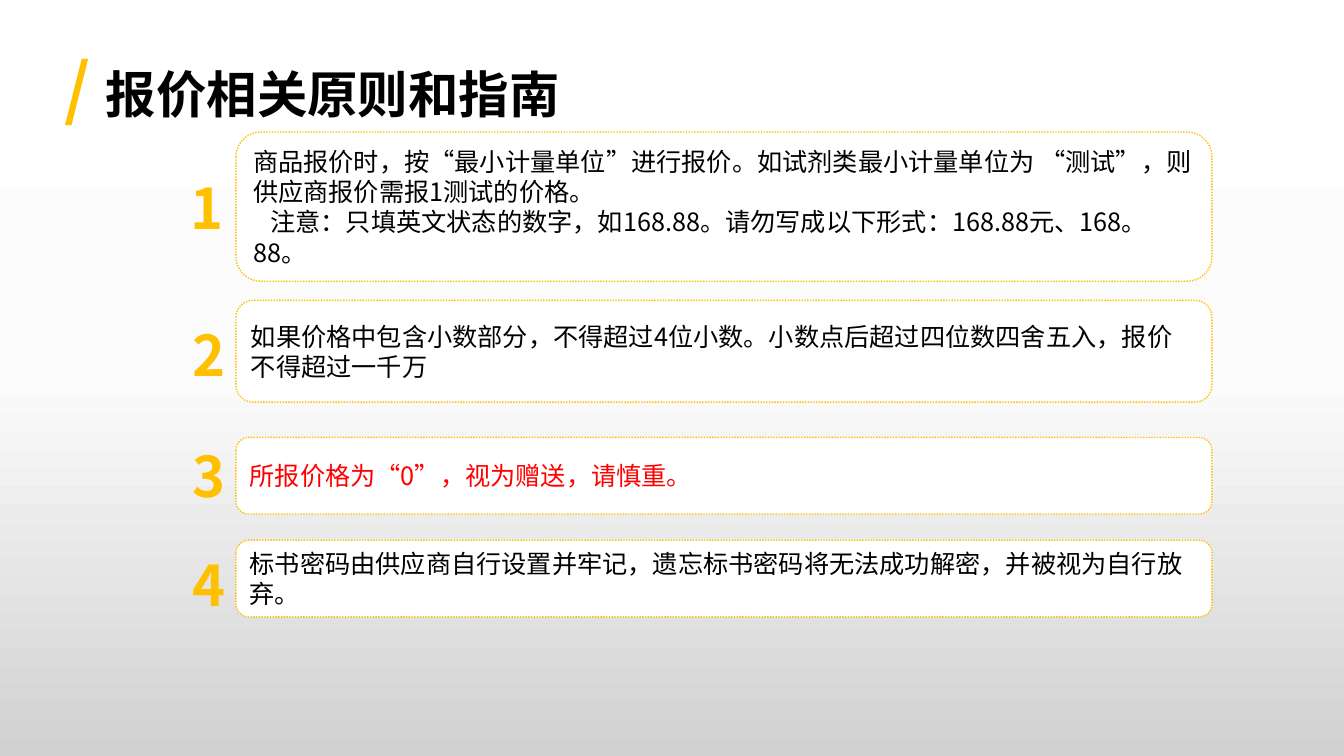
from copy import deepcopy

from lxml.etree import SubElement
from pptx import Presentation
from pptx.dml.color import RGBColor
from pptx.enum.dml import MSO_LINE
from pptx.enum.shapes import MSO_SHAPE
from pptx.enum.text import MSO_ANCHOR, MSO_AUTO_SIZE, PP_ALIGN
from pptx.oxml.ns import qn
from pptx.util import Inches, Pt

FONT = "Noto Sans CJK SC"
COLORS = {"accent": "FFC000", "text": "000000", "warning": "FF0000", "card": "FFFFFF"}
BACKGROUND = [(0, "FFFFFF"), (0.5, "FBFBFB"), (1, "D1D1D1")]
TITLE = [("/ ", 48, "accent"), ("报价相关原则和指南", 36, "text")]

# Card top, card height, number left, number top, text colour, paragraphs
RULES = [
    (1.31, 1.48, 1.76, 1.76, "text", [
        "商品报价时，按“最小计量单位”进行报价。如试剂类最小计量单位为 “测试”，则供应商报价需报1测试的价格。",
        "注意：只填英文状态的数字，如168.88。请勿写成以下形式：168.88元、168。88。"]),
    (2.98, 1.01, 1.78, 3.22, "text", [
        "如果价格中包含小数部分，不得超过4位小数。小数点后超过四位数四舍五入，报价不得超过一千万"]),
    (4.34, 0.76, 1.78, 4.42, "warning", ["所报价格为“0”，视为赠送，请慎重。"]),
    (5.36, 0.76, 1.78, 5.5, "text", [
        "标书密码由供应商自行设置并牢记，遗忘标书密码将无法成功解密，并被视为自行放弃。"]),
]
CARD_LEFT, CARD_WIDTH = 2.34, 9.68
NUMBER_WIDTH, NUMBER_HEIGHT = 0.59, 0.58
NOTE_INDENT = 0.17


def rgb(name):
    return RGBColor.from_string(COLORS[name])


def set_font(p, size, color, bold=False):
    """Format a paragraph, for Latin and East Asian letters alike."""
    f = p.font
    f.size, f.bold, f.name = Pt(size), bold, FONT
    f.color.rgb = rgb(color)
    SubElement(p._p.pPr.find(qn("a:defRPr")), qn("a:ea"), typeface=FONT)


def add_box(s, left, top, width, height):
    box = s.shapes.add_shape(MSO_SHAPE.ROUNDED_RECTANGLE, Inches(left), Inches(top),
                             Inches(width), Inches(height))
    box.shadow.inherit = False
    box.text_frame.vertical_anchor = MSO_ANCHOR.MIDDLE
    return box


def set_background(s):
    fill = s.background.fill
    fill.gradient()
    fill.gradient_angle = 270
    first = fill._fill._gradFill.gsLst[0]
    first.addnext(deepcopy(first))
    for stop, (position, color) in zip(fill.gradient_stops, BACKGROUND):
        stop.position = position
        stop.color.rgb = RGBColor.from_string(color)


def add_title(s):
    title = s.shapes.title
    title.left, title.top = Inches(0.54), Inches(0.4)
    title.width, title.height = Inches(7.88), Inches(0.91)
    tf = title.text_frame
    tf.auto_size = MSO_AUTO_SIZE.NONE
    tf.vertical_anchor = MSO_ANCHOR.MIDDLE
    p = tf.paragraphs[0]
    p.alignment = PP_ALIGN.LEFT
    set_font(p, 36, "text", bold=True)
    for text, size, color in TITLE:
        r = p.add_run()
        r.text = text
        r.font.size = Pt(size)
        r.font.color.rgb = rgb(color)


def add_card(s, top, height, color, texts):
    card = add_box(s, CARD_LEFT, top, CARD_WIDTH, height)
    card.fill.solid()
    card.fill.fore_color.rgb = rgb("card")
    card.line.color.rgb = rgb("accent")
    card.line.width = Pt(1)
    card.line.dash_style = MSO_LINE.ROUND_DOT
    tf = card.text_frame
    for i, text in enumerate(texts):
        p = tf.add_paragraph() if i else tf.paragraphs[0]
        p.text = text
        p.alignment = PP_ALIGN.LEFT
        set_font(p, 18, color)
        if i:
            p._p.pPr.set("indent", str(Inches(NOTE_INDENT)))


def add_number(s, left, top, number):
    box = add_box(s, left, top, NUMBER_WIDTH, NUMBER_HEIGHT)
    box.adjustments[0] = 0.13
    box.fill.background()
    box.line.fill.background()
    tf = box.text_frame
    tf.word_wrap = False
    p = tf.paragraphs[0]
    p.text = str(number)
    p.alignment = PP_ALIGN.CENTER
    set_font(p, 40, "accent", bold=True)


def main():
    prs = Presentation()
    prs.slide_width, prs.slide_height = Inches(13.33), Inches(7.5)
    s = prs.slides.add_slide(prs.slide_layouts[5])
    set_background(s)
    add_title(s)
    for number, (top, height, left, number_top, color, texts) in enumerate(RULES, 1):
        add_card(s, top, height, color, texts)
        add_number(s, left, number_top, number)
    prs.save("out.pptx")


if __name__ == "__main__":
    main()
